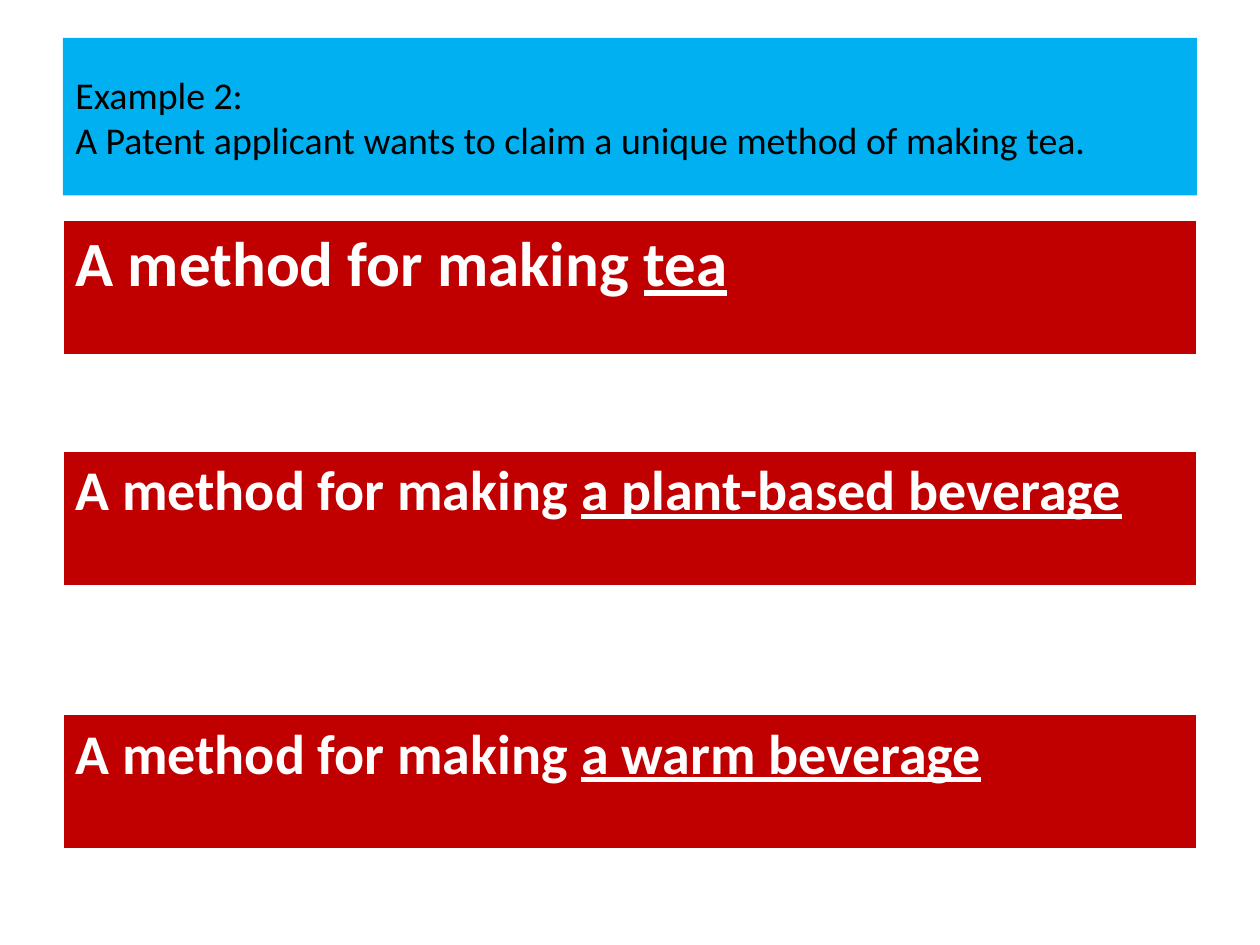
import dataclasses

import pptx
import pptx.dml.color
import pptx.enum.shapes
import pptx.enum.text
import pptx.oxml
import pptx.oxml.ns
import pptx.util

Pt = pptx.util.Pt
LEFT, WIDTH = 36, 648
CLAIM_HEIGHT = 77.76
BORDERS = {"lnL": 1, "lnR": 1, "lnT": 1, "lnB": 3}


@dataclasses.dataclass
class Claim:
    top: float
    subject: str
    size: float


CLAIMS = [
    Claim(126, "tea", 36),
    Claim(257.76, "a plant-based beverage", 32),
    Claim(408.24, "a warm beverage", 32),
]


def color(value: str) -> pptx.dml.color.RGBColor:
    return pptx.dml.color.RGBColor.from_string(value)


def format_runs(paragraph, size: float, font_color: str, bold: bool) -> None:
    for run in paragraph.runs:
        run.font.name = "Calibri"
        run.font.size = Pt(size)
        run.font.bold = bold
        run.font.color.rgb = color(font_color)


def set_borders(cell, border_color: str) -> None:
    properties = cell._tc.get_or_add_tcPr()
    for index, (side, width) in enumerate(BORDERS.items()):
        border = pptx.oxml.parse_xml(
            f'<a:{side} {pptx.oxml.ns.nsdecls("a")} w="{Pt(width)}">'
            f'<a:solidFill><a:srgbClr val="{border_color}"/></a:solidFill>'
            f"</a:{side}>"
        )
        properties.insert(index, border)


def draw_heading(slide, text: str) -> None:
    shape = slide.shapes.add_shape(
        pptx.enum.shapes.MSO_SHAPE.RECTANGLE,
        Pt(LEFT), Pt(21.6), Pt(WIDTH), Pt(90),
    )
    shape.shadow.inherit = False
    shape.fill.solid()
    shape.fill.fore_color.rgb = color("00B0F0")
    shape.line.fill.background()
    text_frame = shape.text_frame
    text_frame.word_wrap = True
    text_frame.vertical_anchor = pptx.enum.text.MSO_ANCHOR.MIDDLE
    text_frame.text = text
    for paragraph in text_frame.paragraphs:
        paragraph.alignment = pptx.enum.text.PP_ALIGN.LEFT
        format_runs(paragraph, 21.6, "000000", False)


def draw_claim(slide, claim: Claim) -> None:
    table = slide.shapes.add_table(
        1, 1, Pt(LEFT), Pt(claim.top), Pt(WIDTH), Pt(CLAIM_HEIGHT)
    ).table
    cell = table.cell(0, 0)
    cell.fill.solid()
    cell.fill.fore_color.rgb = color("C00000")
    set_borders(cell, "FFFFFF")
    paragraph = cell.text_frame.paragraphs[0]
    paragraph.text = "A method for making "
    subject = paragraph.add_run()
    subject.text = claim.subject
    subject.font.underline = True
    format_runs(paragraph, claim.size, "FFFFFF", True)


def main() -> None:
    presentation = pptx.Presentation()
    presentation.slide_width = Pt(720)
    presentation.slide_height = Pt(540)
    slide = presentation.slides.add_slide(presentation.slide_layouts[6])
    draw_heading(
        slide,
        "Example 2:\v"
        "A Patent applicant wants to claim a unique method of making tea.",
    )
    for claim in CLAIMS:
        draw_claim(slide, claim)
    presentation.save("out.pptx")


if __name__ == "__main__":
    main()
